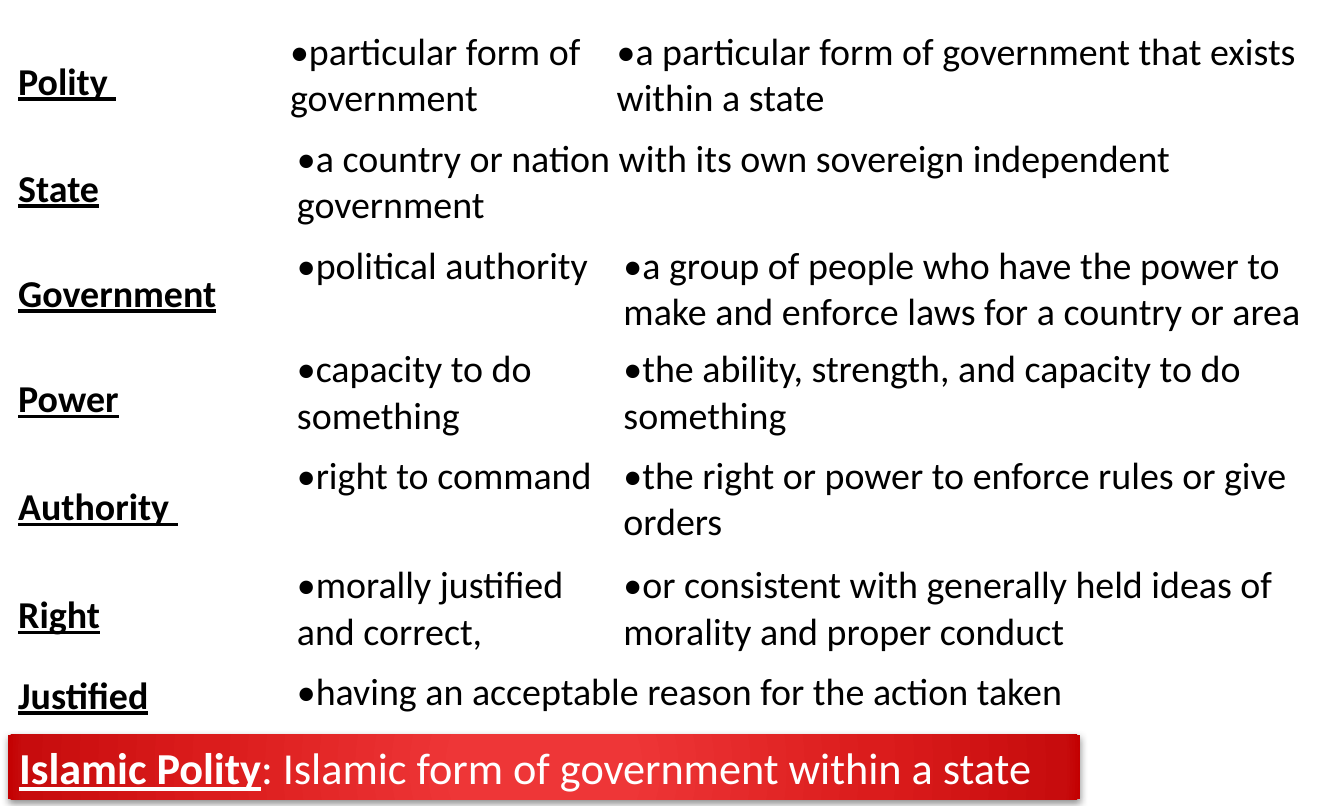
"""Build a glossary slide of political terms with a highlighted closing definition."""
import dataclasses

import lxml.etree
import pptx
import pptx.dml.color
import pptx.enum.text
import pptx.oxml
import pptx.oxml.ns
import pptx.util

Inches = pptx.util.Inches


@dataclasses.dataclass(frozen=True)
class Theme:
    font: str = "Calibri"
    text: str = "000000"
    paper: str = "FFFFFF"
    body_size: int = 24
    banner_size: int = 28
    shadow: str = "000000"
    banner_stops: tuple = ((0, "EF3737"), (15, "EE3637"), (62, "DB1C1C"), (97, "C70C0D"), (100, "C30001"))


theme = Theme()


def add_text(paragraph, text, size=theme.body_size, color=theme.text, bold=False, underline=False, bullet=None):
    """Add a formatted run, with an optional bullet on its paragraph."""
    run = paragraph.add_run()
    run.text = text
    run.font.name = theme.font
    run.font.size = pptx.util.Pt(size)
    run.font.color.rgb = pptx.dml.color.RGBColor.from_string(color)
    run.font.bold = bold
    run.font.underline = underline
    if bullet:
        properties = paragraph._p.get_or_add_pPr()
        bullet_color = lxml.etree.SubElement(properties, pptx.oxml.ns.qn("a:buClr"))
        lxml.etree.SubElement(bullet_color, pptx.oxml.ns.qn("a:srgbClr"), val=color)
        lxml.etree.SubElement(properties, pptx.oxml.ns.qn("a:buFont"), typeface=theme.font)
        lxml.etree.SubElement(properties, pptx.oxml.ns.qn("a:buChar"), char=bullet)


presentation = pptx.Presentation()
presentation.slide_width = pptx.util.Cm(30)
presentation.slide_height = pptx.util.Cm(18)
slide = presentation.slides.add_slide(presentation.slide_layouts[6])

glossary = [
    ("Polity ", 0.94, ["particular form of government",
                       "a particular form of government that exists within a state"]),
    ("State", 0.94, ["a country or nation with its own sovereign independent government"]),
    ("Government", 0.91, ["political authority",
                          "a group of people who have the power to make and enforce laws for a country or area"]),
    ("Power", 0.94, ["capacity to do something", "the ability, strength, and capacity to do something"]),
    ("Authority ", 0.96, ["right to command", "the right or power to enforce rules or give orders"]),
    ("Right", 0.94, ["morally justified and correct,",
                     "or consistent with generally held ideas of morality and proper conduct"]),
    ("Justified", 0.48, ["having an acceptable reason for the action taken"]),
]
column_widths = [2.42, 2.87, 6.53]

table = slide.shapes.add_table(
    len(glossary), len(column_widths), Inches(0), Inches(0.25), Inches(11.81), Inches(6.12)
).table
table.first_row = False
table.horz_banding = False
for column, width in zip(table.columns, column_widths):
    column.width = Inches(width)

for row_index, (term, height, definitions) in enumerate(glossary):
    table.rows[row_index].height = Inches(height)
    definition_inset = 0.13 if row_index == 0 else 0.19
    for column_index, cell in enumerate(table.rows[row_index].cells):
        cell.fill.solid()
        cell.fill.fore_color.rgb = pptx.dml.color.RGBColor.from_string(theme.paper)
        cell.margin_left = Inches(definition_inset if column_index else 0.16)
        cell.margin_top = cell.margin_right = Inches(0.01)
        cell.margin_bottom = 0
    term_cell = table.cell(row_index, 0)
    term_cell.vertical_anchor = pptx.enum.text.MSO_ANCHOR.MIDDLE
    add_text(term_cell.text_frame.paragraphs[0], term, bold=True, underline=True)
    if len(definitions) == 1:
        table.cell(row_index, 1).merge(table.cell(row_index, 2))
    for column_index, definition in enumerate(definitions, start=1):
        add_text(table.cell(row_index, column_index).text_frame.paragraphs[0], definition, bullet="•")

banner = slide.shapes.add_textbox(Inches(0.07), Inches(6.46), Inches(9.42), Inches(0.57))
banner.text_frame.word_wrap = True
banner_paragraph = banner.text_frame.paragraphs[0]
add_text(banner_paragraph, "Islamic Polity", size=theme.banner_size, color=theme.paper, bold=True, underline=True)
add_text(banner_paragraph, ": Islamic form of government within a state", size=theme.banner_size, color=theme.paper)

namespace = pptx.oxml.ns.nsdecls("a")
stops = "".join(
    f'<a:gs pos="{position * 1000}"><a:srgbClr val="{color}"/></a:gs>' for position, color in theme.banner_stops
)
gradient = pptx.oxml.parse_xml(
    f'<a:gradFill {namespace} rotWithShape="1"><a:gsLst>{stops}</a:gsLst>'
    '<a:path path="circle"><a:fillToRect l="50000" t="50000" r="50000" b="50000"/></a:path></a:gradFill>'
)
shadow = pptx.oxml.parse_xml(
    f'<a:effectLst {namespace}><a:outerShdw blurRad="{pptx.util.Pt(5)}" dist="{pptx.util.Pt(2)}" '
    f'dir="5400000" rotWithShape="0"><a:srgbClr val="{theme.shadow}"><a:alpha val="43000"/></a:srgbClr>'
    '</a:outerShdw></a:effectLst>'
)
banner_properties = banner._element.spPr
banner_properties.replace(banner_properties.find(pptx.oxml.ns.qn("a:noFill")), gradient)
banner_properties.append(shadow)

presentation.save("out.pptx")
